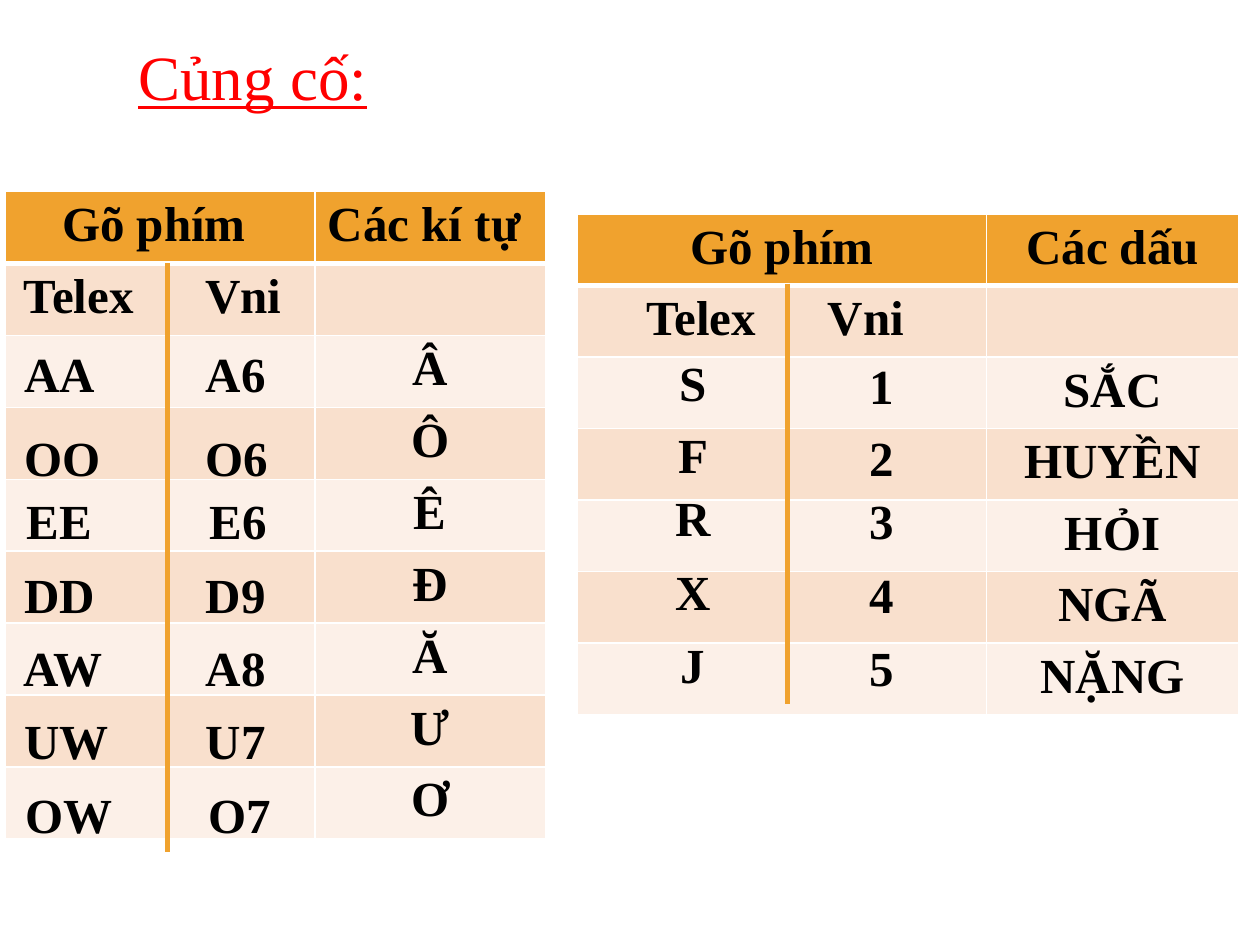
import pptx
import pptx.dml.color
import pptx.enum.shapes
import pptx.enum.text
import pptx.oxml.ns
import pptx.util
from dataclasses import dataclass
from lxml import etree

Inches = pptx.util.Inches
Pt = pptx.util.Pt
qn = pptx.oxml.ns.qn
Align = pptx.enum.text.PP_ALIGN


@dataclass
class Theme:
    font: str = "Times New Roman"
    ink: str = "000000"
    title: str = "FF0000"
    head: str = "F0A22E"
    bands: tuple = ("FCF0E8", "F9E0CD")
    grid: str = "FFFFFF"
    big: int = 36
    body: int = 28
    thin: int = 1
    thick: int = 3


def rgb(code):
    return pptx.dml.color.RGBColor.from_string(code)


class Deck:
    def __init__(self, theme):
        self.theme = theme
        self.prs = pptx.Presentation()
        self.prs.slide_width = Inches(10)
        self.prs.slide_height = Inches(7.5)
        self.slide = self.prs.slides.add_slide(self.prs.slide_layouts[6])

    def add_text(self, para, text, title=False):
        run = para.add_run()
        run.text = text
        font = run.font
        font.name = self.theme.font
        font.size = Pt(self.theme.big if title else self.theme.body)
        font.bold = not title
        font.underline = title
        font.color.rgb = rgb(self.theme.title if title else self.theme.ink)

    def label(self, text, left, top, width, height=0.57, wrap=True, title=False):
        box = self.slide.shapes.add_textbox(
            Inches(left), Inches(top), Inches(width), Inches(height))
        frame = box.text_frame
        frame.word_wrap = wrap
        frame.auto_size = pptx.enum.text.MSO_AUTO_SIZE.SHAPE_TO_FIT_TEXT
        para = frame.paragraphs[0]
        para.alignment = Align.LEFT if title else Align.CENTER
        self.add_text(para, text, title)

    def rule(self, x, top, end):
        line = self.slide.shapes.add_connector(
            pptx.enum.shapes.MSO_CONNECTOR.STRAIGHT,
            Inches(x), Inches(top), Inches(x), Inches(end))
        line.line.color.rgb = rgb(self.theme.head)
        line.line.width = Pt(self.theme.thick)
        etree.SubElement(line._element.spPr, qn("a:effectLst"))

    def border(self, cell, row):
        props = cell._tc.get_or_add_tcPr()
        heavy = {("lnB", 0), ("lnT", 1)}
        for side in ("lnL", "lnR", "lnT", "lnB"):
            width = self.theme.thick if (side, row) in heavy else self.theme.thin
            edge = etree.SubElement(props, qn(f"a:{side}"), w=str(Pt(width)))
            fill = etree.SubElement(edge, qn("a:solidFill"))
            etree.SubElement(fill, qn("a:srgbClr"), val=self.theme.grid)

    def pair(self, cell, inset):
        """Put the two key names in one cell, split by a tab stop."""
        cell.margin_left = Inches(inset)
        para = cell.text_frame.paragraphs[0]
        para.alignment = Align.LEFT
        tabs = etree.SubElement(para._p.get_or_add_pPr(), qn("a:tabLst"))
        etree.SubElement(tabs, qn("a:tab"), pos=str(Inches(1.44)), algn="l")
        self.add_text(para, "Telex\tVni")

    def table(self, left, top, height, widths, heads, marks, inset):
        rows = [heads, ("", "")] + [("", mark) for mark in marks]
        grid = self.slide.shapes.add_table(
            len(rows), 2, Inches(left), Inches(top),
            Inches(sum(widths)), Inches(height)).table
        for col, width in zip(grid.columns, widths):
            col.width = Inches(width)
        for r, texts in enumerate(rows):
            grid.rows[r].height = Inches(height / len(rows))
            for c, text in enumerate(texts):
                cell = grid.cell(r, c)
                self.border(cell, r)
                cell.fill.solid()
                cell.fill.fore_color.rgb = rgb(
                    self.theme.bands[r % 2] if r else self.theme.head)
                if text:
                    para = cell.text_frame.paragraphs[0]
                    para.alignment = Align.CENTER
                    self.add_text(para, text)
        self.pair(grid.cell(1, 0), inset)


def main():
    deck = Deck(Theme())
    deck.label("Củng cố:", 1, 0.25, 2.5, 0.71, title=True)

    # Letters: table, then Telex and Vni keys with left edge and width
    deck.table(0.04, 1.52, 5.14, (2.46, 1.83), ("Gõ phím ", "Các kí tự "),
               "ÂÔÊĐĂƯƠ", 0.15)
    tops = (2.68, 3.34, 3.84, 4.43, 5.01, 5.59, 6.18)
    telex = (("AA", 0.09, 0.77), ("OO", 0.09, 0.81), ("EE", 0.11, 0.72),
             ("DD", 0.09, 0.77), ("AW", 0.08, 0.84), ("UW", 0.09, 0.88),
             ("OW", 0.1, 0.9))
    vni = (("A6", 1.53, 0.68), ("O6", 1.53, 0.7), ("E6", 1.56, 0.66),
           ("D9", 1.53, 0.68), ("A8", 1.53, 0.68), ("U7", 1.53, 0.68),
           ("O7", 1.55, 0.7))
    for keys, wrap in ((telex, True), (vni, False)):
        for top, (key, left, width) in zip(tops, keys):
            deck.label(key, left, top, width, wrap=wrap)
    deck.rule(1.33, 2.09, 6.76)

    # Tone marks: table and keys
    deck.table(4.58, 1.7, 3.97, (3.25, 2), ("Gõ phím", "Các dấu"),
               ("SẮC", "HUYỀN", "HỎI", "NGÃ", "NẶNG"), 0.55)
    deck.rule(6.25, 2.25, 5.59)
    tops = (2.77, 3.34, 3.84, 4.43, 5.01)
    for keys, left, lift in (("12345", 6.75, 0), ("SFRXJ", 5.25, 0.02)):
        for top, key in zip(tops, keys):
            deck.label(key, left, top - lift, 0.5)

    deck.prs.save("out.pptx")


if __name__ == "__main__":
    main()
